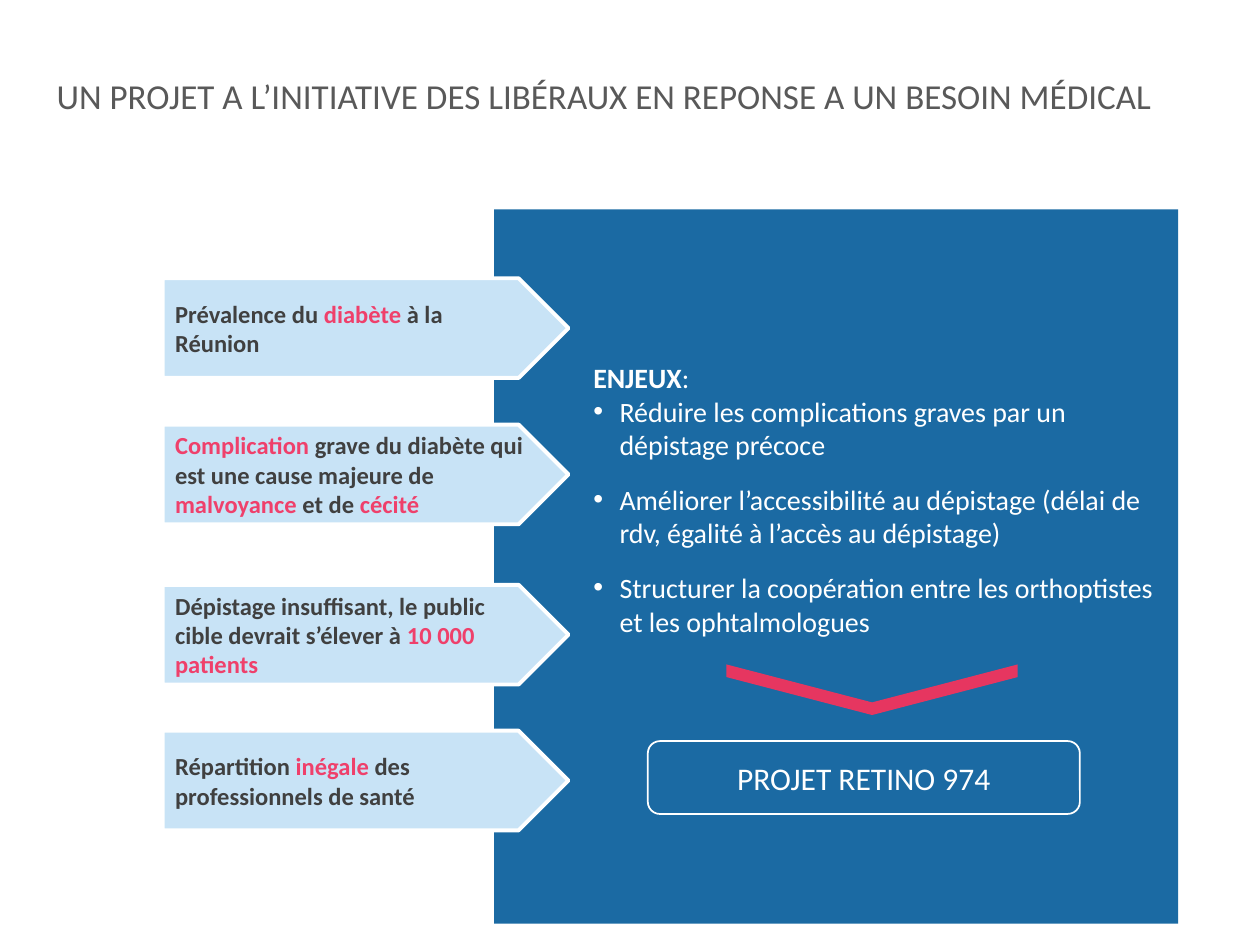
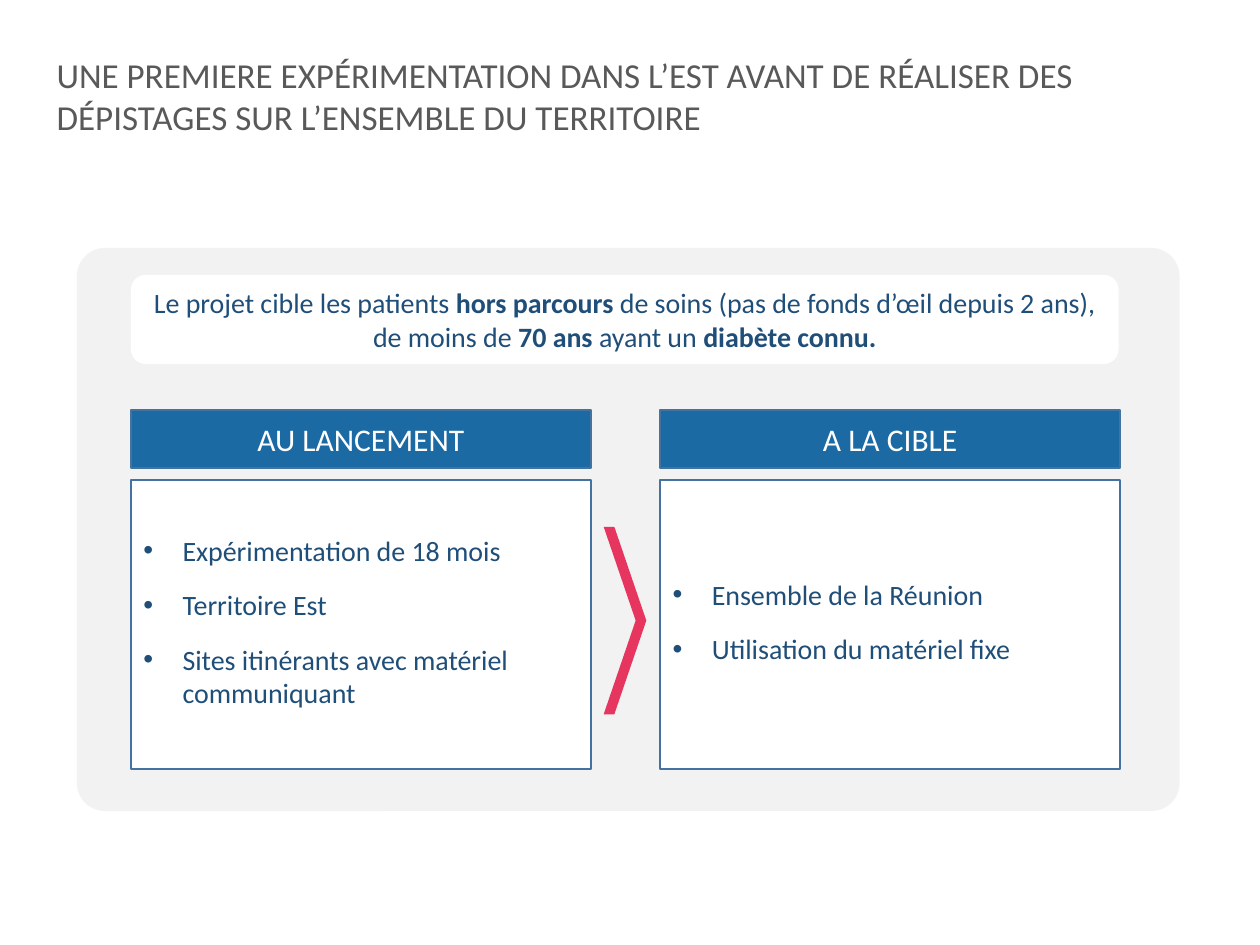
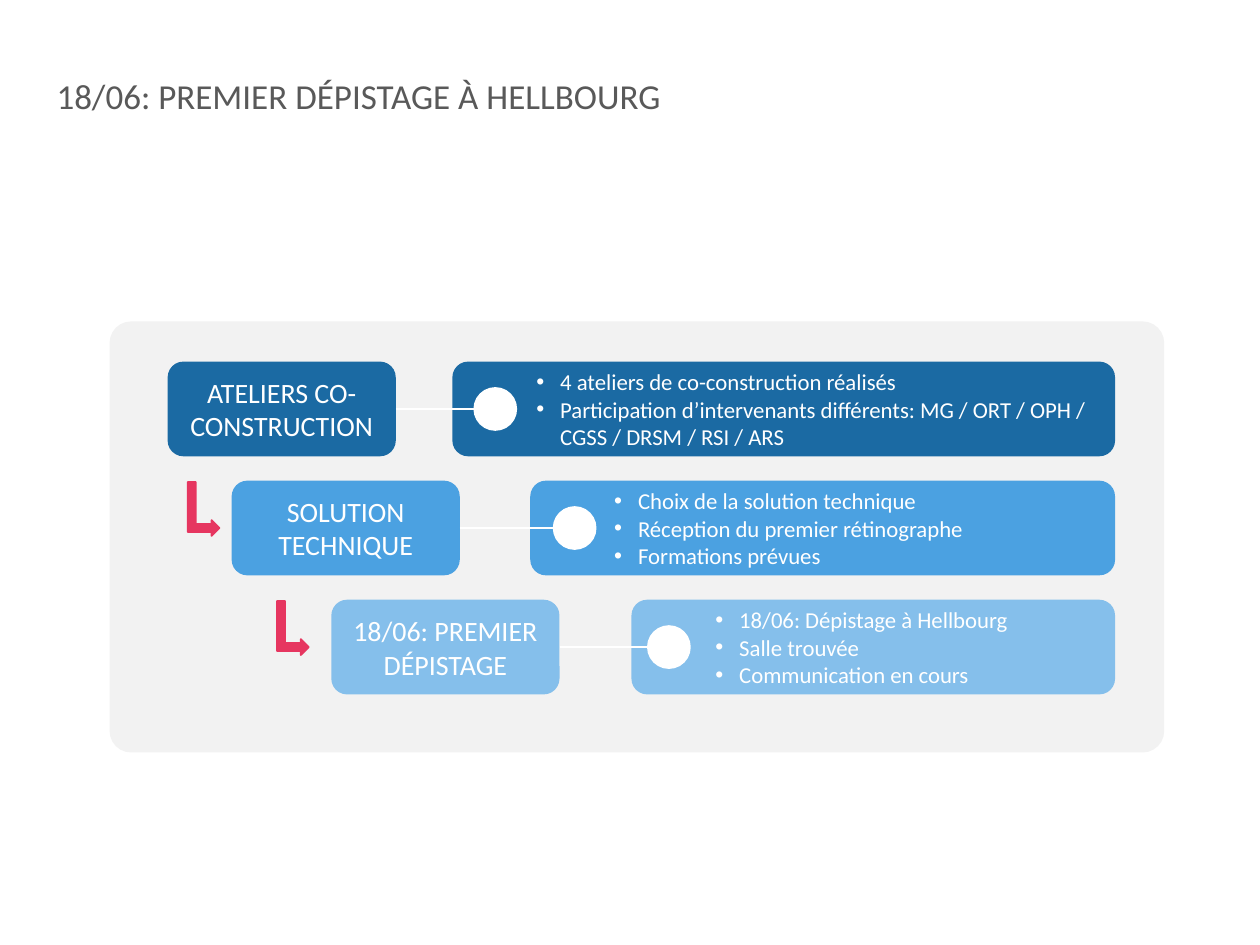
from dataclasses import dataclass, replace
from typing import Any, NamedTuple, Optional

from lxml.etree import SubElement
from pptx import Presentation
from pptx.dml.color import RGBColor
from pptx.enum.shapes import MSO_CONNECTOR, MSO_SHAPE
from pptx.enum.text import MSO_ANCHOR, MSO_AUTO_SIZE, PP_ALIGN
from pptx.oxml.ns import qn
from pptx.util import Cm, Pt

BLUE, SKY, PALE, ICE = "1B6AA3", "4BA1E1", "85BFEB", "C8E3F6"
NAVY, BORDER, CRIMSON, PINK = "1F4E79", "43739E", "E63660", "EF406B"
WHITE, PANEL, GREY, DARK = "FFFFFF", "F2F2F2", "595959", "404040"


class Box(NamedTuple):
    left: float
    top: float
    width: float
    height: float


@dataclass(frozen=True)
class TextStyle:
    size: float
    color: str
    bold: bool = False
    accent: Optional[str] = None
    align: PP_ALIGN = PP_ALIGN.LEFT
    anchor: MSO_ANCHOR = MSO_ANCHOR.MIDDLE
    indent: float = 0
    after: float = 0
    margin_left: float = 0.25
    margin_right: float = 0.25
    margin_top: float = 0.13


@dataclass(frozen=True)
class Reason:
    top: float
    text: str


@dataclass(frozen=True)
class Phase:
    left: float
    title: str
    points: list[str]


@dataclass(frozen=True)
class Step:
    left: float
    detail_left: float
    dot_left: float
    arrow_left: Optional[float]
    color: str
    title: list[str]
    points: list[str]


TITLE = TextStyle(20, GREY)
TITLE_BOX = Box(0.89, 0.33, 22.86, 3.18)
BANNER = TextStyle(18, WHITE, align=PP_ALIGN.CENTER)
STAKES = TextStyle(16, WHITE, anchor=MSO_ANCHOR.TOP, indent=0.53, after=12)
REASON = TextStyle(14, DARK, bold=True, accent=PINK)
TARGET = TextStyle(16, NAVY, align=PP_ALIGN.CENTER)
PHASE = TextStyle(16, NAVY, indent=0.79, after=12, margin_top=0)
STEP = TextStyle(16, WHITE, align=PP_ALIGN.CENTER, margin_left=0.2, margin_right=0.2)
DETAIL = TextStyle(13, WHITE, indent=0.48, margin_left=1.6)

REASONS = [
    Reason(5.61, "Prévalence du *diabète *à la Réunion"),
    Reason(8.56, "*Complication* grave du diabète qui est une cause majeure de "
                 "*malvoyance* et de *cécité*"),
    Reason(11.79, "Dépistage insuffisant, le public cible devrait s’élever à *10 000 patients*"),
    Reason(14.73, "Répartition *inégale* des professionnels de santé"),
]
PHASES = [
    Phase(2.64, "AU LANCEMENT", ["Expérimentation de 18 mois", "Territoire Est",
                                 "Sites itinérants avec matériel communiquant"]),
    Phase(13.31, "A LA CIBLE", ["Ensemble de la Réunion", "Utilisation du matériel fixe"]),
]
STEPS = [
    Step(3.38, 9.12, 9.58, None, BLUE, ["ATELIERS CO-CONSTRUCTION"],
         ["4 ateliers de co-construction réalisés",
          "Participation d’intervenants différents: MG / ORT / OPH / CGSS / DRSM / RSI / ARS"]),
    Step(4.67, 10.69, 11.18, 3.56, SKY, ["SOLUTION TECHNIQUE"],
         ["Choix de la solution technique", "Réception du premier rétinographe",
          "Formations prévues"]),
    Step(6.68, 12.73, 13.08, 5.36, PALE, ["18/06: PREMIER", "DÉPISTAGE"],
         ["18/06: Dépistage à Hellbourg", "Salle trouvée", "Communication en cours"]),
]


def rgb(value: str) -> RGBColor:
    """Turn a hex string into a colour."""
    return RGBColor.from_string(value)


def assign(target: Any, values: dict[str, Any]) -> None:
    """Set each named attribute of the target."""
    for name, value in values.items():
        setattr(target, name, value)


def place(shape: Any, box: Box) -> None:
    """Move and size a shape to a box given in centimetres."""
    assign(shape, {name: Cm(value) for name, value in box._asdict().items()})


def paint(shape: Any, fill: str, line: Optional[str] = None, width: float = 1) -> None:
    """Give a shape a solid fill and an optional outline."""
    shape.fill.solid()
    shape.fill.fore_color.rgb = rgb(fill)
    if line:
        shape.line.color.rgb = rgb(line)
        shape.line.width = Pt(width)
    else:
        shape.line.fill.background()


def add_paragraph(paragraph: Any, text: str, style: TextStyle) -> None:
    """Fill a paragraph, with stars around its emphasised parts."""
    assign(paragraph, {"alignment": style.align, "space_before": Pt(0),
                       "space_after": Pt(style.after), "line_spacing": 1.0})
    props = paragraph._p.get_or_add_pPr()
    props.set("marL", str(Cm(style.indent)))
    props.set("indent", str(-Cm(style.indent)))
    if style.indent:
        SubElement(props, qn("a:buFont")).set("typeface", "Arial")
        SubElement(props, qn("a:buChar")).set("char", "•")
    else:
        SubElement(props, qn("a:buNone"))
    for index, part in enumerate(text.split("*")):
        if not part:
            continue
        emphasised = index % 2 == 1
        run = paragraph.add_run()
        run.text = part
        assign(run.font, {"name": "Calibri", "size": Pt(style.size),
                          "bold": style.bold or emphasised})
        run.font.color.rgb = rgb(style.accent if emphasised and style.accent else style.color)


def write(shape: Any, lines: list[str], style: TextStyle, heading: Optional[str] = None) -> None:
    """Write an optional plain heading and the lines into a shape."""
    frame = shape.text_frame
    assign(frame, {"word_wrap": True, "auto_size": MSO_AUTO_SIZE.NONE,
                   "vertical_anchor": style.anchor, "margin_left": Cm(style.margin_left),
                   "margin_right": Cm(style.margin_right), "margin_top": Cm(style.margin_top),
                   "margin_bottom": Cm(0.13)})
    entries = [(line, style) for line in lines]
    if heading:
        entries.insert(0, (heading, replace(style, indent=0, after=0)))
    for index, (text, entry_style) in enumerate(entries):
        paragraph = frame.add_paragraph() if index else frame.paragraphs[0]
        add_paragraph(paragraph, text, entry_style)


def draw(slide: Any, kind: MSO_SHAPE, box: Box, fill: str, line: Optional[str] = None,
         width: float = 1, adjust: Optional[float] = None, rotation: float = 0) -> Any:
    """Draw a preset shape without shadow."""
    shape = slide.shapes.add_shape(kind, *(Cm(value) for value in box))
    shape.shadow.inherit = False
    paint(shape, fill, line, width)
    if adjust is not None:
        shape.adjustments[0] = adjust
    shape.rotation = rotation
    return shape


def draw_backdrop(slide: Any, kind: MSO_SHAPE, box: Box, fill: str,
                  adjust: Optional[float] = None) -> None:
    """Draw a panel behind everything else on the slide."""
    panel = draw(slide, kind, box, fill, adjust=adjust)
    slide.shapes._spTree.insert(2, panel._element)


def draw_link(slide: Any, start: float, end: float, height: float) -> None:
    """Draw a thin white horizontal line."""
    link = slide.shapes.add_connector(MSO_CONNECTOR.STRAIGHT, Cm(start), Cm(height),
                                      Cm(end), Cm(height))
    link.line.color.rgb = rgb(WHITE)
    link.line.width = Pt(0.75)
    SubElement(link._element.spPr, qn("a:effectLst"))


def start_slide(deck: Any, layout: int, title: str) -> Any:
    """Add a slide with its formatted title."""
    slide = deck.slides.add_slide(deck.slide_layouts[layout])
    place(slide.shapes.title, TITLE_BOX)
    write(slide.shapes.title, [title], TITLE)
    return slide


def build_need(deck: Any) -> None:
    """Build the slide on the medical need and the stakes."""
    slide = start_slide(deck, 1, "UN PROJET A L’INITIATIVE DES LIBÉRAUX EN REPONSE "
                                 "A UN BESOIN MÉDICAL")
    draw_backdrop(slide, MSO_SHAPE.RECTANGLE, Box(9.96, 4.22, 13.79, 14.4), BLUE)
    stakes = slide.placeholders[1]
    place(stakes, Box(11.71, 7.14, 11.79, 5.89))
    write(stakes, ["Réduire les complications graves par un dépistage précoce",
                   "Améliorer l’accessibilité au dépistage (délai de rdv, égalité à l’accès "
                   "au dépistage)",
                   "Structurer la coopération entre les orthoptistes et les ophtalmologues"],
          STAKES, heading="*ENJEUX*:")
    for reason in REASONS:
        plate = draw(slide, MSO_SHAPE.PENTAGON, Box(3.28, reason.top, 8.18, 2.01),
                     ICE, WHITE, 2.25)
        write(plate, [reason.text], REASON)
    draw(slide, MSO_SHAPE.CHEVRON, Box(17.07, 10.97, 1.02, 5.87), CRIMSON,
         adjust=0.75, rotation=90)
    project = draw(slide, MSO_SHAPE.ROUNDED_RECTANGLE, Box(13.06, 14.94, 8.71, 1.47), BLUE, WHITE)
    write(project, ["PROJET RETINO 974"], BANNER)


def build_rollout(deck: Any) -> None:
    """Build the slide comparing the launch with the target."""
    slide = start_slide(deck, 4, "UNE PREMIERE EXPÉRIMENTATION DANS L’EST AVANT DE RÉALISER DES "
                                 "DÉPISTAGES SUR L’ENSEMBLE DU TERRITOIRE")
    draw_backdrop(slide, MSO_SHAPE.ROUNDED_RECTANGLE, Box(1.55, 5, 22.23, 11.35), PANEL, 0.05)
    for index, phase in enumerate(PHASES):
        header = slide.placeholders[2 * index + 1]
        points = slide.placeholders[2 * index + 2]
        place(header, Box(phase.left, 8.26, 9.27, 1.17))
        place(points, Box(phase.left, 9.68, 9.27, 5.82))
        paint(header, BLUE, BORDER)
        paint(points, WHITE, BORDER)
        write(header, [phase.title], BANNER)
        write(points, phase.points, PHASE)
    target = draw(slide, MSO_SHAPE.ROUNDED_RECTANGLE, Box(2.64, 5.54, 19.91, 1.8), WHITE)
    write(target, ["Le projet cible les patients *hors parcours *de soins (pas de fonds d’œil "
                   "depuis 2 ans), de moins de *70 ans *ayant un *diabète connu.*"], TARGET)
    draw(slide, MSO_SHAPE.CHEVRON, Box(12.17, 10.62, 0.86, 3.78), CRIMSON, adjust=0.75)


def build_first_screening(deck: Any) -> None:
    """Build the slide with the three steps to the first screening."""
    slide = start_slide(deck, 5, "18/06: PREMIER DÉPISTAGE À HELLBOURG")
    draw_backdrop(slide, MSO_SHAPE.ROUNDED_RECTANGLE, Box(2.21, 6.48, 21.26, 8.69), PANEL, 0.05)
    step_width, height, dot, right = 4.6, 1.91, 0.81, 22.48
    for index, step in enumerate(STEPS):
        top = 7.29 + 2.4 * index
        middle = top + height / 2
        name = draw(slide, MSO_SHAPE.ROUNDED_RECTANGLE,
                    Box(step.left, top, step_width, height), step.color)
        write(name, step.title, STEP)
        detail = draw(slide, MSO_SHAPE.ROUNDED_RECTANGLE,
                      Box(step.detail_left, top, right - step.detail_left, height), step.color)
        write(detail, step.points, DETAIL)
        draw(slide, MSO_SHAPE.OVAL, Box(step.dot_left, middle - dot / 2, dot, dot),
             WHITE, WHITE, 2)
        draw_link(slide, step.left + step_width, step.dot_left, middle)
        if step.arrow_left is not None:
            draw(slide, MSO_SHAPE.BENT_UP_ARROW, Box(step.arrow_left, top + 0.25, 1.09, 0.64),
                 CRIMSON, CRIMSON, rotation=90)


def main() -> None:
    """Build and save the presentation."""
    deck = Presentation()
    assign(deck, {"slide_width": Cm(25.4), "slide_height": Cm(19.05)})
    build_need(deck)
    build_rollout(deck)
    build_first_screening(deck)
    deck.save("out.pptx")


if __name__ == "__main__":
    main()
